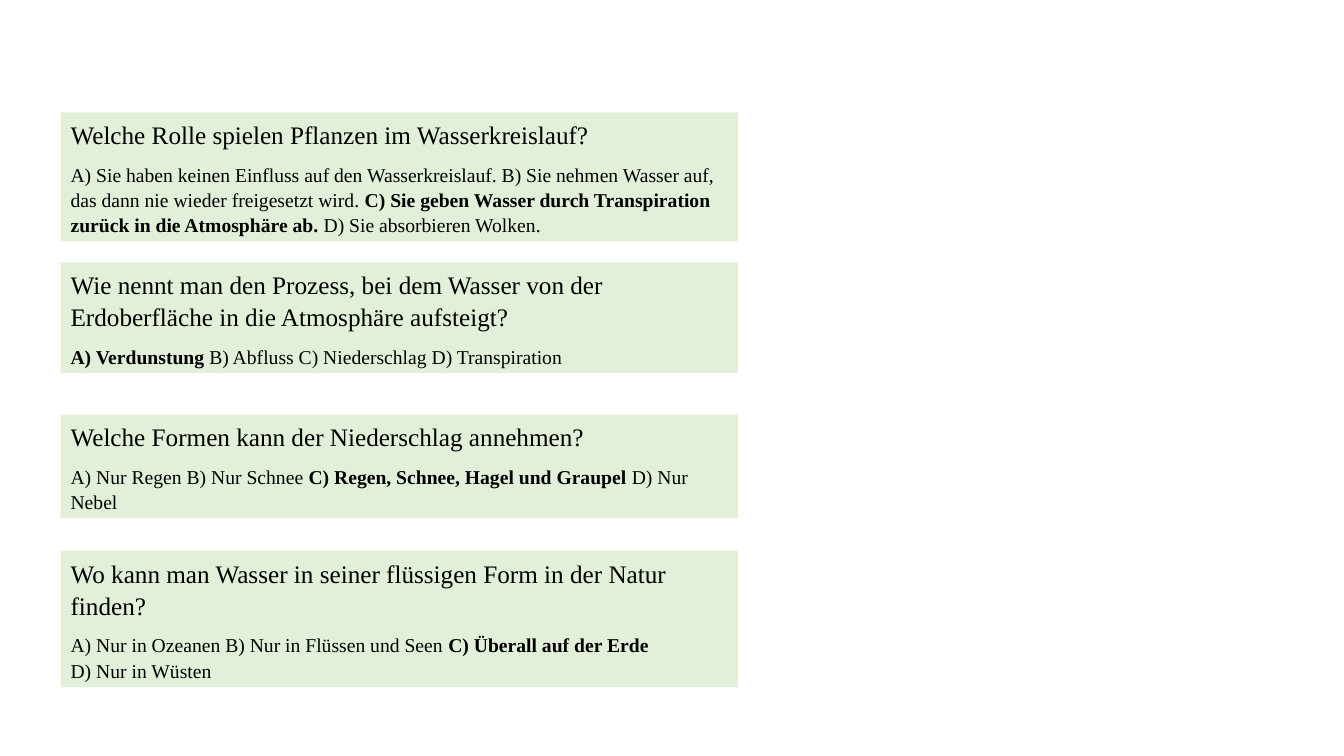
from pptx import Presentation
from pptx.dml.color import RGBColor
from pptx.enum.shapes import MSO_SHAPE
from pptx.enum.text import MSO_ANCHOR, MSO_AUTO_SIZE, PP_ALIGN
from pptx.util import Cm, Pt


def color(hex_value):
    return RGBColor.from_string(hex_value)


def add_text(paragraph, text, size, bold=False):
    run = paragraph.add_run()
    run.text = text
    font_format = {"name": "Times New Roman", "size": Pt(size), "bold": bold}
    for name, value in font_format.items():
        setattr(run.font, name, value)
    run.font.color.rgb = color("000000")


presentation = Presentation()
presentation.slide_width = Cm(33.87)
presentation.slide_height = Cm(19.05)
slide = presentation.slides.add_slide(presentation.slide_layouts[6])

questions = [
    (2.83, 3.25, "Welche Rolle spielen Pflanzen im Wasserkreislauf?", [
        ("A) Sie haben keinen Einfluss auf den Wasserkreislauf. "
         "B) Sie nehmen Wasser auf, das dann nie wieder freigesetzt wird. ", False),
        ("C) Sie geben Wasser durch Transpiration zurück in die Atmosphäre ab. ", True),
        ("D) Sie absorbieren Wolken.", False),
    ]),
    (6.61, 2.79, "Wie nennt man den Prozess, bei dem Wasser von der "
                 "Erdoberfläche in die Atmosphäre aufsteigt?", [
        ("A) Verdunstung ", True),
        ("B) Abfluss C) Niederschlag D) Transpiration", False),
    ]),
    (10.45, 2.6, "Welche Formen kann der Niederschlag annehmen?", [
        ("A) Nur Regen B) Nur Schnee ", False),
        ("C) Regen, Schnee, Hagel und Graupel ", True),
        ("D) Nur Nebel", False),
    ]),
    (13.88, 3.44, "Wo kann man Wasser in seiner flüssigen Form in der Natur finden?", [
        ("A) Nur in Ozeanen B) Nur in Flüssen und Seen ", False),
        ("C) Überall auf der Erde ", True),
        ("\n", False),
        ("D) Nur in Wüsten", False),
    ]),
]

frame_format = {
    "word_wrap": True,
    "auto_size": MSO_AUTO_SIZE.SHAPE_TO_FIT_TEXT,
    "vertical_anchor": MSO_ANCHOR.TOP,
}
paragraph_format = {
    "alignment": PP_ALIGN.LEFT,
    "line_spacing": 1.07,
    "space_after": Pt(8),
}

for top, height, question, answers in questions:
    shape = slide.shapes.add_shape(
        MSO_SHAPE.RECTANGLE, Cm(1.53), Cm(top), Cm(17.07), Cm(height))
    shape.shadow.inherit = False
    shape.fill.solid()
    shape.fill.fore_color.rgb = color("E2F0D9")
    shape.line.fill.background()

    text_frame = shape.text_frame
    for name, value in frame_format.items():
        setattr(text_frame, name, value)

    question_paragraph = text_frame.paragraphs[0]
    answer_paragraph = text_frame.add_paragraph()
    for paragraph in (question_paragraph, answer_paragraph):
        for name, value in paragraph_format.items():
            setattr(paragraph, name, value)

    add_text(question_paragraph, question, 18)
    for text, correct in answers:
        if text == "\n":
            answer_paragraph.add_line_break()
        else:
            add_text(answer_paragraph, text, 14, correct)

presentation.save("out.pptx")
